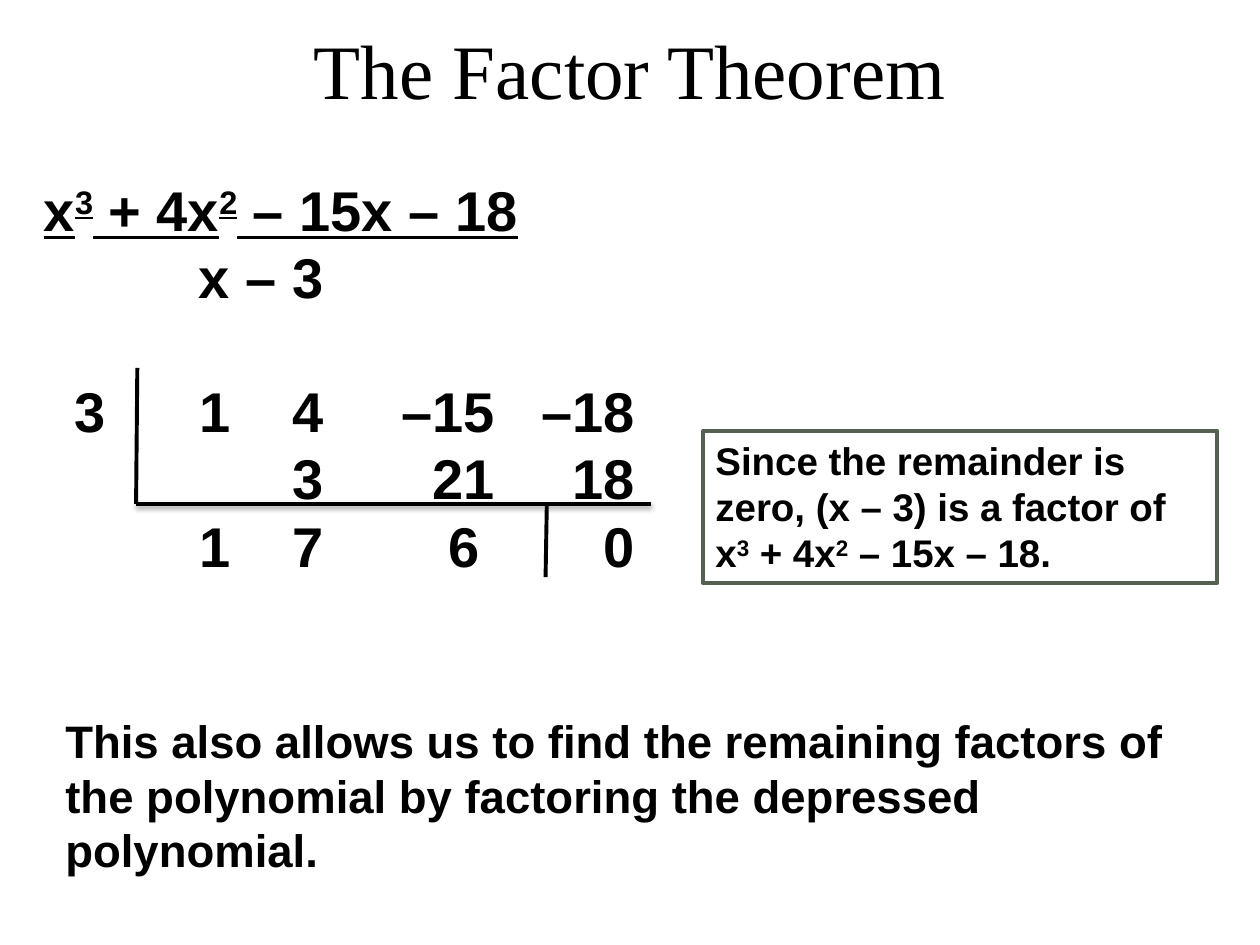
from typing import NamedTuple, Optional

from lxml.etree import SubElement
from pptx import Presentation
from pptx.dml.color import RGBColor
from pptx.enum.shapes import MSO_CONNECTOR, MSO_SHAPE
from pptx.enum.text import MSO_ANCHOR, MSO_AUTO_SIZE, PP_ALIGN
from pptx.oxml.ns import qn
from pptx.util import Inches, Pt

BLACK = RGBColor(0x00, 0x00, 0x00)
BORDER = RGBColor(0x56, 0x61, 0x53)


class Box(NamedTuple):
    left: float
    top: float
    width: float
    height: float


class Line(NamedTuple):
    """One line of text; ^ marks open and close a superscript."""
    text: str
    stops: tuple[float, ...] = ()
    space_before: float = 0
    underline: bool = False


class Rule(NamedTuple):
    start: tuple[float, float]
    end: tuple[float, float]
    weight: float
    shadow: bool = False


def add_text(slide, box: Box, lines: list[Line], *, size: float,
             font: str = "Arial", bold: bool = True, align=PP_ALIGN.LEFT,
             anchor=MSO_ANCHOR.TOP, spacing: Optional[float] = None,
             border: Optional[RGBColor] = None) -> None:
    position = [Inches(value) for value in box]
    if border is None:
        shape = slide.shapes.add_textbox(*position)
    else:
        shape = slide.shapes.add_shape(MSO_SHAPE.RECTANGLE, *position)
        shape.shadow.inherit = False
        shape.fill.background()
        shape.line.color.rgb = border
        shape.line.width = Pt(2.25)
    frame = shape.text_frame
    frame.word_wrap = True
    frame.auto_size = MSO_AUTO_SIZE.NONE
    frame.vertical_anchor = anchor
    for index, line in enumerate(lines):
        paragraph = frame.add_paragraph() if index else frame.paragraphs[0]
        paragraph.alignment = align
        paragraph.space_before = Pt(line.space_before)
        if spacing:
            paragraph.line_spacing = Pt(spacing)
        if line.stops:
            add_tab_stops(paragraph, line.stops)
        for part, text in enumerate(line.text.split("^")):
            run = paragraph.add_run()
            run.text = text
            run.font.name = font
            run.font.size = Pt(size)
            run.font.bold = bold
            run.font.underline = line.underline
            run.font.color.rgb = BLACK
            if part % 2:
                run.font._element.set("baseline", "30000")


def add_tab_stops(paragraph, stops: tuple[float, ...]) -> None:
    tab_list = SubElement(paragraph._p.get_or_add_pPr(), qn("a:tabLst"))
    for stop in stops:
        SubElement(tab_list, qn("a:tab"), pos=str(Inches(stop)), algn="r")


def add_rule(group, rule: Rule) -> None:
    points = [Inches(value) for value in rule.start + rule.end]
    connector = group.shapes.add_connector(MSO_CONNECTOR.STRAIGHT, *points)
    connector.line.color.rgb = BLACK
    connector.line.width = Pt(rule.weight)
    effects = SubElement(connector._element.spPr, qn("a:effectLst"))
    if rule.shadow:
        shadow = SubElement(effects, qn("a:outerShdw"), blurRad=str(Pt(3.1)),
                            dist=str(Pt(1.6)), dir="5400000", rotWithShape="0")
        color = SubElement(shadow, qn("a:srgbClr"), val=str(BLACK))
        SubElement(color, qn("a:alpha"), val="38000")


def main() -> None:
    presentation = Presentation()
    presentation.slide_width = Inches(10)
    presentation.slide_height = Inches(7.5)
    slide = presentation.slides.add_slide(presentation.slide_layouts[6])

    # Title
    add_text(slide, Box(0.75, -0.08, 8.5, 1.25), [Line("The Factor Theorem")],
             size=44, font="Times New Roman", bold=False,
             align=PP_ALIGN.CENTER, anchor=MSO_ANCHOR.MIDDLE)

    # Quotient and its synthetic division, in right-aligned columns
    divisor, cubic, square, linear, constant = 0.49, 1.48, 2.22, 3.58, 4.69
    add_text(slide, Box(0.25, 1.34, 4.93, 3.33), [
        Line("x^3^ + 4x^2^ – 15x – 18", underline=True),
        Line("\tx – 3", (square,)),
        Line("\t3\t1\t4\t–15\t–18",
             (divisor, cubic, square, linear, constant), space_before=38.4),
        Line("\t3\t21\t18", (square, linear, constant)),
        Line("\t1\t7\t6\t0", (cubic, square, 3.46, constant)),
    ], size=32, spacing=38.4)

    # Conclusion
    add_text(slide, Box(5.58, 3.42, 4.08, 1.21), [
        Line("Since the remainder is zero, (x – 3) is a factor of"),
        Line("x^3^ + 4x^2^ – 15x – 18."),
    ], size=22, spacing=26.4, border=BORDER)

    # Next step
    add_text(slide, Box(0.42, 5.61, 9.03, 0.98), [
        Line("This also allows us to find the remaining factors of"),
        Line("the polynomial by factoring the depressed polynomial."),
    ], size=26, spacing=31.2)

    # Division bracket
    bracket = slide.shapes.add_group_shape()
    for rule in (Rule((1.09, 2.92), (1.08, 4), 2.25),
                 Rule((4.34, 4), (4.33, 4.58), 2.25),
                 Rule((1.08, 4), (5.17, 4), 2, shadow=True)):
        add_rule(bracket, rule)

    presentation.save("out.pptx")


if __name__ == "__main__":
    main()
